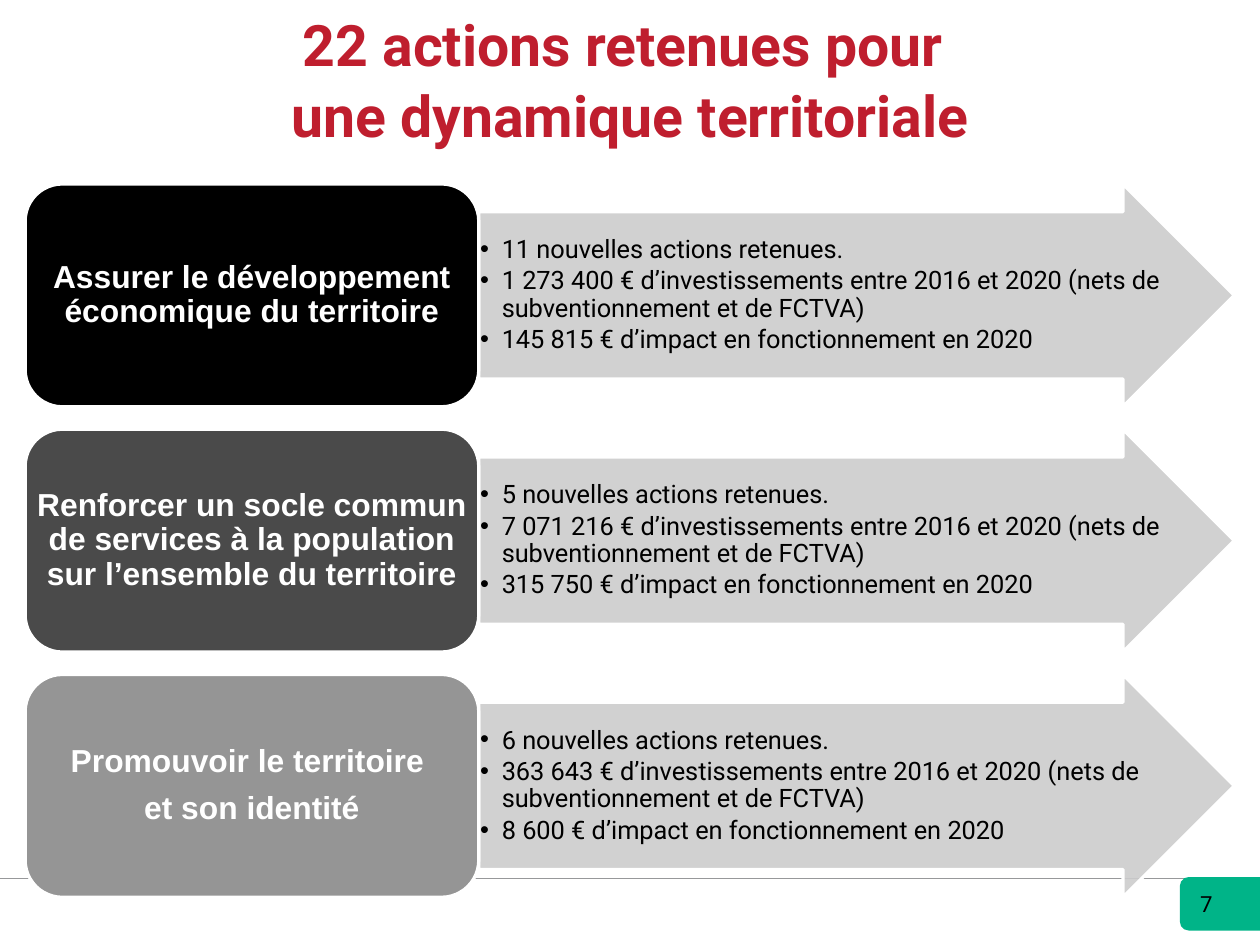
"""Build the slide presenting the 22 actions chosen for the territory."""
from dataclasses import dataclass
from typing import Any

from lxml import etree
from pptx import Presentation
from pptx.dml.color import RGBColor
from pptx.enum.shapes import MSO_CONNECTOR, MSO_SHAPE
from pptx.enum.text import MSO_ANCHOR, MSO_AUTO_SIZE, PP_ALIGN
from pptx.oxml.ns import qn
from pptx.util import Cm, Pt

ROUNDED = MSO_SHAPE.ROUNDED_RECTANGLE
ARROW = MSO_SHAPE.RIGHT_ARROW
STRAIGHT = MSO_CONNECTOR.STRAIGHT
MIDDLE = MSO_ANCHOR.MIDDLE
TOP = MSO_ANCHOR.TOP
NO_FIT = MSO_AUTO_SIZE.NONE
CENTER = PP_ALIGN.CENTER
LEFT = PP_ALIGN.LEFT
COMPARISON_LAYOUT = 4


@dataclass(frozen=True)
class TextStyle:
    font: str
    size: float
    color: str
    bold: bool = False
    alignment: Any = LEFT
    line_spacing: float = 0.9
    space_after: float = 0
    bullet: bool = False


@dataclass(frozen=True)
class Theme:
    title: TextStyle = TextStyle("Roboto", 36, "BF1E2E", True, CENTER, 1.04)
    goal: TextStyle = TextStyle("Arial", 20, "FFFFFF", True, CENTER, 0.9, 8)
    result: TextStyle = TextStyle("Roboto", 16, "000000", space_after=2.5, bullet=True)
    number: TextStyle = TextStyle("Roboto", 14, "000000", line_spacing=0.93)
    arrow: str = "CCCCCC"
    arrow_opacity: int = 90
    outline: str = "FFFFFF"
    rule: str = "97989A"
    tab: str = "00B488"


@dataclass(frozen=True)
class Box:
    left: float
    top: float
    width: float
    height: float

    def lengths(self) -> dict[str, int]:
        """Return the box as lengths by attribute name."""
        return {name: Cm(getattr(self, name)) for name in ("left", "top", "width", "height")}


@dataclass(frozen=True)
class Axis:
    color: str
    goal: tuple[str, ...]
    actions: int
    investment: str
    impact: str

    def results(self) -> tuple[str, ...]:
        """Return the three list items of the axis."""
        return (
            f"{self.actions} nouvelles actions retenues.",
            f"{self.investment} € d’investissements entre 2016 et 2020 "
            "(nets de subventionnement et de FCTVA)",
            f"{self.impact} € d’impact en fonctionnement en 2020",
        )


THEME = Theme()
SLIDE_WIDTH, SLIDE_HEIGHT = 28, 21
ROW_TOP, ROW_HEIGHT, ROW_PITCH = 4.09, 4.95, 5.45
GOAL_LEFT, GOAL_WIDTH, ARROW_WIDTH = 0.56, 10.08, 16.79
RULE_TOP = 19.53
AXES = (
    Axis("000000", ("Assurer le développement économique du territoire",),
         11, "1 273 400", "145 815"),
    Axis("4A4A4A", ("Renforcer un socle commun de services à la population "
                    "sur l’ensemble du territoire",),
         5, "7 071 216", "315 750"),
    Axis("959595", ("Promouvoir le territoire ", "et son identité"),
         6, "363 643", "8 600"),
)


def apply_format(target: Any, values: dict[str, Any]) -> None:
    """Set every attribute named in values on the target."""
    for name, value in values.items():
        setattr(target, name, value)


def add_bullet(paragraph: Any) -> None:
    """Give the paragraph a round bullet and a hanging indent."""
    properties = paragraph._p.get_or_add_pPr()
    properties.set("marL", str(Cm(0.48)))
    properties.set("indent", str(-Cm(0.48)))
    etree.SubElement(properties, qn("a:buFont")).set("typeface", "Arial")
    etree.SubElement(properties, qn("a:buChar")).set("char", "•")


def write_text(shape: Any, texts: tuple[str, ...], style: TextStyle,
               margins: tuple[float, float] = (0, 0), anchor: Any = MIDDLE) -> None:
    """Write the texts as styled paragraphs of the shape."""
    horizontal, vertical = (Cm(margin) for margin in margins)
    frame = shape.text_frame
    apply_format(frame, {
        "word_wrap": True, "auto_size": NO_FIT, "vertical_anchor": anchor,
        "margin_left": horizontal, "margin_right": horizontal,
        "margin_top": vertical, "margin_bottom": vertical,
    })
    frame.text = "\n".join(texts)
    for paragraph in frame.paragraphs:
        if style.bullet:
            add_bullet(paragraph)
        apply_format(paragraph, {
            "alignment": style.alignment, "line_spacing": style.line_spacing,
            "space_before": Pt(0), "space_after": Pt(style.space_after),
        })
        for run in paragraph.runs:
            apply_format(run.font, {"name": style.font, "size": Pt(style.size),
                                    "bold": style.bold})
            run.font.color.rgb = RGBColor.from_string(style.color)


def add_block(slide: Any, kind: Any, box: Box, color: str, outlined: bool = True) -> Any:
    """Add a filled preset shape, with a white outline if wanted."""
    shape = slide.shapes.add_shape(kind, **box.lengths())
    shape.shadow.inherit = False
    shape.fill.solid()
    shape.fill.fore_color.rgb = RGBColor.from_string(color)
    if outlined:
        shape.line.color.rgb = RGBColor.from_string(THEME.outline)
        shape.line.width = Pt(2)
    else:
        shape.line.fill.background()
    return shape


def add_footer(slide: Any) -> None:
    """Add the footer rule and the page tab."""
    rule = slide.shapes.add_connector(STRAIGHT, 0, Cm(RULE_TOP), Cm(SLIDE_WIDTH), Cm(RULE_TOP))
    rule.line.color.rgb = RGBColor.from_string(THEME.rule)
    rule.line.width = Pt(0.5)
    etree.SubElement(rule.element.spPr, qn("a:effectLst"))
    add_block(slide, ROUNDED, Box(26.22, 19.49, 2.39, 1.19), THEME.tab, outlined=False)
    number = slide.shapes.add_textbox(**Box(26.42, 19.71, 1.2, 1.1).lengths())
    write_text(number, ("7",), THEME.number, (0.25, 0.13), TOP)


def add_axis(slide: Any, axis: Axis, row: int, results: Any) -> None:
    """Draw one axis: its arrow, its results and its goal."""
    top = ROW_TOP + row * ROW_PITCH
    arrow_box = Box(GOAL_LEFT + GOAL_WIDTH, top, ARROW_WIDTH, ROW_HEIGHT)
    arrow = add_block(slide, ARROW, arrow_box, THEME.arrow)
    arrow.adjustments[0] = 0.75
    color = arrow.element.spPr.find(qn("a:solidFill"))[0]
    etree.SubElement(color, qn("a:alpha")).set("val", str(THEME.arrow_opacity * 1000))
    apply_format(results, arrow_box.lengths())
    write_text(results, axis.results(), THEME.result, (0.03, 0.03))
    arrow.element.addnext(results.element)
    goal = add_block(slide, ROUNDED, Box(GOAL_LEFT, top, GOAL_WIDTH, ROW_HEIGHT), axis.color)
    write_text(goal, axis.goal, THEME.goal)


def main() -> None:
    """Build and save the presentation."""
    presentation = Presentation()
    apply_format(presentation, {"slide_width": Cm(SLIDE_WIDTH), "slide_height": Cm(SLIDE_HEIGHT)})
    slide = presentation.slides.add_slide(presentation.slide_layouts[COMPARISON_LAYOUT])
    title, *bodies = slide.placeholders
    add_footer(slide)
    apply_format(title, Box(0, 0.36, SLIDE_WIDTH, 2.74).lengths())
    write_text(title, ("22 actions retenues pour \vune dynamique territoriale",), THEME.title)
    for row, (axis, results) in enumerate(zip(AXES, bodies)):
        add_axis(slide, axis, row, results)
    for unused in bodies[len(AXES):]:
        unused.element.getparent().remove(unused.element)
    presentation.save("out.pptx")


if __name__ == "__main__":
    main()
